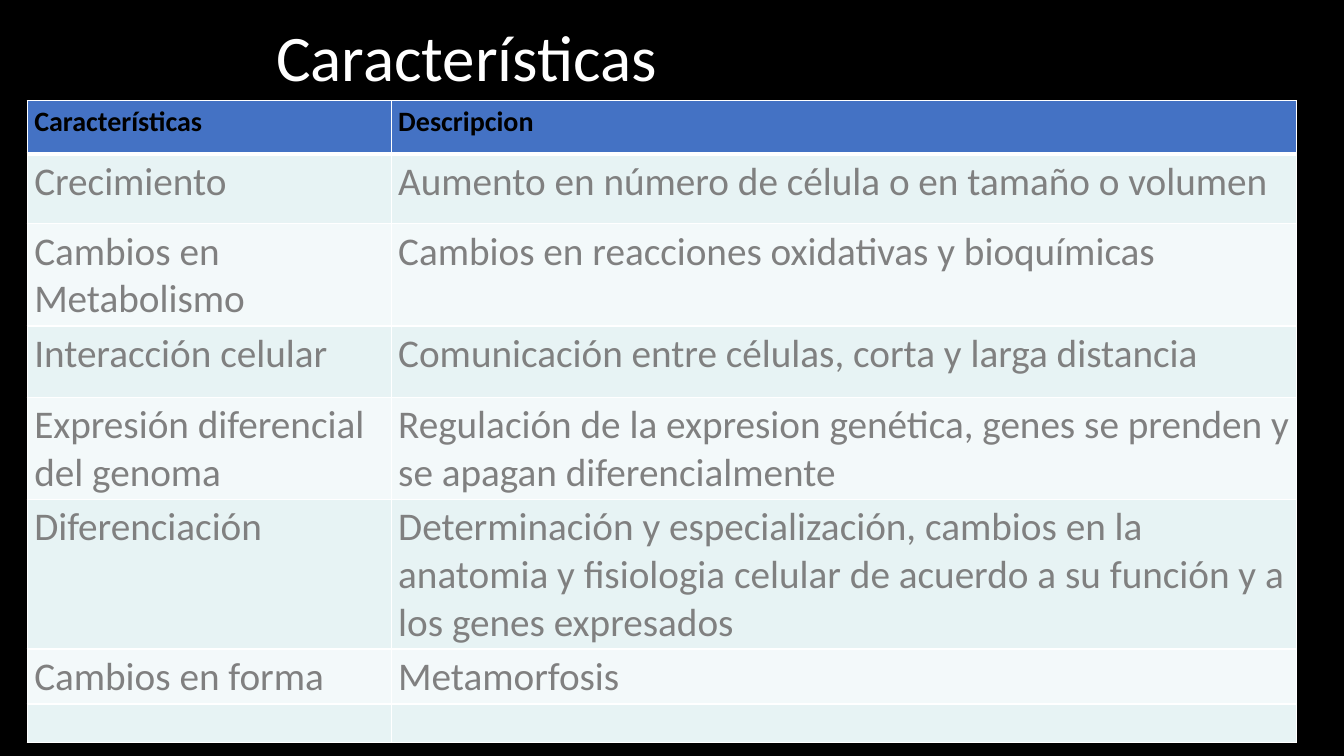
from typing import NamedTuple

from lxml import etree
from pptx import Presentation
from pptx import util as u
from pptx.dml.color import RGBColor
from pptx.enum import text
from pptx.oxml import ns

FONT = "Calibri"
BLACK = RGBColor(0x00, 0x00, 0x00)
WHITE = RGBColor(0xFF, 0xFF, 0xFF)
BLUE = RGBColor(0x44, 0x72, 0xC4)
GRAY = RGBColor(0x80, 0x80, 0x80)
BAND_DARK = RGBColor(0xE7, 0xF3, 0xF4)
BAND_LIGHT = RGBColor(0xF3, 0xF9, 0xFA)
COLUMN_WIDTHS = (3.61, 8.98)
THIN, THICK = 1, 3


class Row(NamedTuple):
    height: float
    feature: str
    description: str


ROWS = (
    Row(0.53, "Características", "Descripcion"),
    Row(0.69, "Crecimiento", "Aumento en número de célula o en tamaño o volumen"),
    Row(0.96, "Cambios en Metabolismo", "Cambios en reacciones oxidativas y bioquímicas"),
    Row(0.71, "Interacción celular", "Comunicación entre células, corta y larga distancia"),
    Row(0.96, "Expresión diferencial del genoma",
        "Regulación de la expresion genética, genes se prenden y se apagan diferencialmente"),
    Row(1.4, "Diferenciación",
        "Determinación y especialización, cambios en la anatomia y fisiologia celular "
        "de acuerdo a su función y a los genes expresados"),
    Row(0.53, "Cambios en forma", "Metamorfosis"),
    Row(0.38, "", ""),
)


def style_runs(paragraph, size: float, color: RGBColor, bold: bool = False) -> None:
    for run in paragraph.runs:
        run.font.name = FONT
        run.font.size = u.Pt(size)
        run.font.bold = bold
        run.font.color.rgb = color


def add_title(slide, title: str) -> None:
    shape = slide.shapes.add_textbox(u.Inches(2.64), u.Inches(0.2), u.Inches(8.05), u.Inches(0.8))
    frame = shape.text_frame
    frame.word_wrap = True
    frame.vertical_anchor = text.MSO_ANCHOR.MIDDLE
    frame.text = title
    paragraph = frame.paragraphs[0]
    paragraph.line_spacing = 0.9
    style_runs(paragraph, 46.4, WHITE)


def set_borders(cell, top: int, bottom: int) -> None:
    properties = cell._tc.get_or_add_tcPr()
    widths = {"a:lnL": THIN, "a:lnR": THIN, "a:lnT": top, "a:lnB": bottom}
    for position, (tag, width) in enumerate(widths.items()):
        line = etree.Element(ns.qn(tag), w=str(u.Pt(width)))
        fill = etree.SubElement(line, ns.qn("a:solidFill"))
        etree.SubElement(fill, ns.qn("a:srgbClr"), val=str(WHITE))
        properties.insert(position, line)


def fill_cell(cell, content: str, row_index: int) -> None:
    header = row_index == 0
    cell.margin_left = cell.margin_right = u.Inches(0.07)
    cell.margin_top = cell.margin_bottom = u.Inches(0.04)
    cell.fill.solid()
    cell.fill.fore_color.rgb = BLUE if header else BAND_DARK if row_index % 2 else BAND_LIGHT
    set_borders(cell, THICK if row_index == 1 else THIN, THICK if header else THIN)
    if content:
        cell.text_frame.text = content
        style_runs(cell.text_frame.paragraphs[0], 20 if header else 28,
                   BLACK if header else GRAY, header)


def add_features_table(slide) -> None:
    table = slide.shapes.add_table(
        len(ROWS), len(COLUMN_WIDTHS), u.Inches(0.27), u.Inches(1),
        u.Inches(sum(COLUMN_WIDTHS)), u.Inches(sum(row.height for row in ROWS)),
    ).table
    for column, width in zip(table.columns, COLUMN_WIDTHS):
        column.width = u.Inches(width)
    for row_index, row in enumerate(ROWS):
        table.rows[row_index].height = u.Inches(row.height)
        for column_index, content in enumerate((row.feature, row.description)):
            fill_cell(table.cell(row_index, column_index), content, row_index)


def main() -> None:
    presentation = Presentation()
    presentation.slide_width = u.Inches(13.33)
    presentation.slide_height = u.Inches(7.5)
    slide = presentation.slides.add_slide(presentation.slide_layouts[6])
    slide.background.fill.solid()
    slide.background.fill.fore_color.rgb = BLACK
    add_title(slide, "Características")
    add_features_table(slide)
    presentation.save("out.pptx")


if __name__ == "__main__":
    main()
